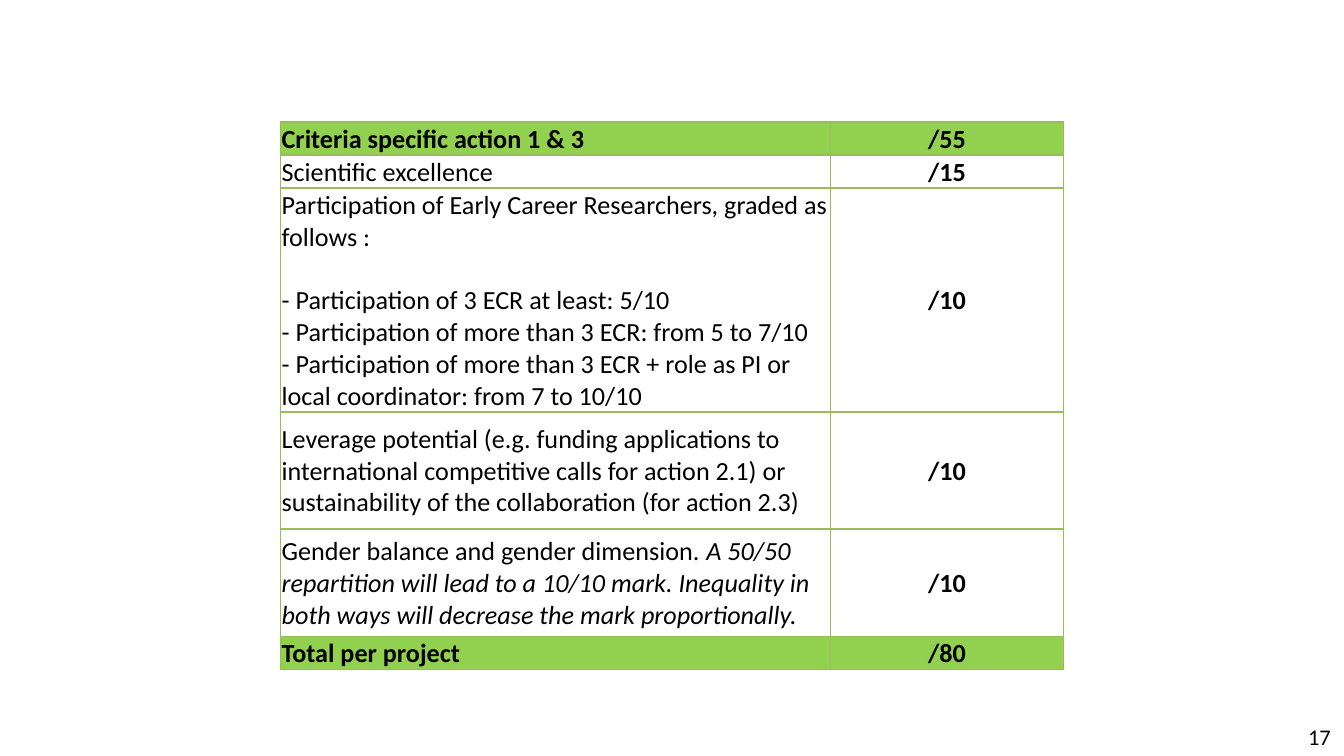
import pptx
import pptx.dml.color
import pptx.enum.text
import pptx.oxml
import pptx.oxml.ns
import pptx.util

Pt = pptx.util.Pt
ALIGN = pptx.enum.text.PP_ALIGN
MIDDLE = pptx.enum.text.MSO_ANCHOR.MIDDLE
COLORS = {"text": "000000", "band": "92D050", "border": "9BBB59"}

CRITERIA = [
    (17.5, [["Criteria specific action 1 & 3"]], "/55"),
    (17.5, [["Scientific excellence"]], "/15"),
    (119.5, [
        ["Participation of Early Career Researchers, graded as follows :"],
        ["- Participation of 3 ECR at least: 5/10"],
        ["- Participation of more than 3 ECR: from 5 to 7/10"],
        ["- Participation of more than 3 ECR + role as PI or local coordinator: from 7 to 10/10"],
    ], "/10"),
    (62.6, [["Leverage potential (e.g. funding applications to international competitive calls "
             "for action 2.1) or sustainability of the collaboration (for action 2.3)"]], "/10"),
    (57.6, [["Gender balance and gender dimension. ",
             "A 50/50 repartition will lead to a 10/10 mark. Inequality in both ways "
             "will decrease the mark proportionally."]], "/10"),
    (17.5, [["Total per project"]], "/80"),
]


def add_text(paragraph, text, size=14, bold=False, italic=False, font="Calibri", color="text"):
    run = paragraph.add_run()
    run.text = text
    run.font.name = font
    run.font.size = Pt(size)
    run.font.bold = bold
    run.font.italic = italic
    run.font.color.rgb = pptx.dml.color.RGBColor.from_string(COLORS[color])


class SlideBuilder:
    def __init__(self, slide):
        self.slide = slide
        self.inset = Pt(0.7)
        self.border_width = Pt(1)

    def border(self, cell):
        properties = cell._tc.get_or_add_tcPr()
        for side in ("lnL", "lnR", "lnT", "lnB"):
            properties.append(pptx.oxml.parse_xml(
                f'<a:{side} {pptx.oxml.ns.nsdecls("a")} w="{self.border_width}"><a:solidFill>'
                f'<a:srgbClr val="{COLORS["border"]}"/></a:solidFill></a:{side}>'))

    def cell(self, cell, paragraphs, banded, bold=False, alignment=ALIGN.LEFT):
        self.border(cell)
        if banded:
            cell.fill.solid()
            cell.fill.fore_color.rgb = pptx.dml.color.RGBColor.from_string(COLORS["band"])
        else:
            cell.fill.background()
        cell.margin_left = cell.margin_right = cell.margin_top = self.inset
        cell.margin_bottom = 0
        cell.vertical_anchor = MIDDLE
        frame = cell.text_frame
        for index, runs in enumerate(paragraphs):
            paragraph = frame.add_paragraph() if index else frame.paragraphs[0]
            paragraph.alignment = alignment
            if index == 1:
                paragraph.space_before = Pt(17)
            for position, text in enumerate(runs):
                add_text(paragraph, text, bold=bold, italic=position > 0)

    def criteria_table(self, left, top, widths, criteria):
        height = sum(row[0] for row in criteria)
        table = self.slide.shapes.add_table(
            len(criteria), len(widths), Pt(left), Pt(top), Pt(sum(widths)), Pt(height)).table
        table.first_row = table.horz_banding = False
        for column, width in zip(table.columns, widths):
            column.width = Pt(width)
        for index, (row_height, paragraphs, mark) in enumerate(criteria):
            table.rows[index].height = Pt(row_height)
            banded = index in (0, len(criteria) - 1)
            self.cell(table.cell(index, 0), paragraphs, banded, bold=banded)
            self.cell(table.cell(index, 1), [[mark]], banded, bold=True, alignment=ALIGN.CENTER)

    def page_number(self, text, left, top, width, height):
        frame = self.slide.shapes.add_textbox(Pt(left), Pt(top), Pt(width), Pt(height)).text_frame
        frame.word_wrap = True
        frame.vertical_anchor = MIDDLE
        frame.paragraphs[0].alignment = ALIGN.RIGHT
        add_text(frame.paragraphs[0], text, size=12)


def main():
    presentation = pptx.Presentation()
    presentation.slide_width = Pt(720)
    presentation.slide_height = Pt(405)
    builder = SlideBuilder(presentation.slides.add_slide(presentation.slide_layouts[6]))
    builder.criteria_table(150.2, 65.3, [294.7, 124.8], CRITERIA)
    builder.page_number("17", 552, 384, 168, 21.6)
    presentation.save("out.pptx")


if __name__ == "__main__":
    main()
